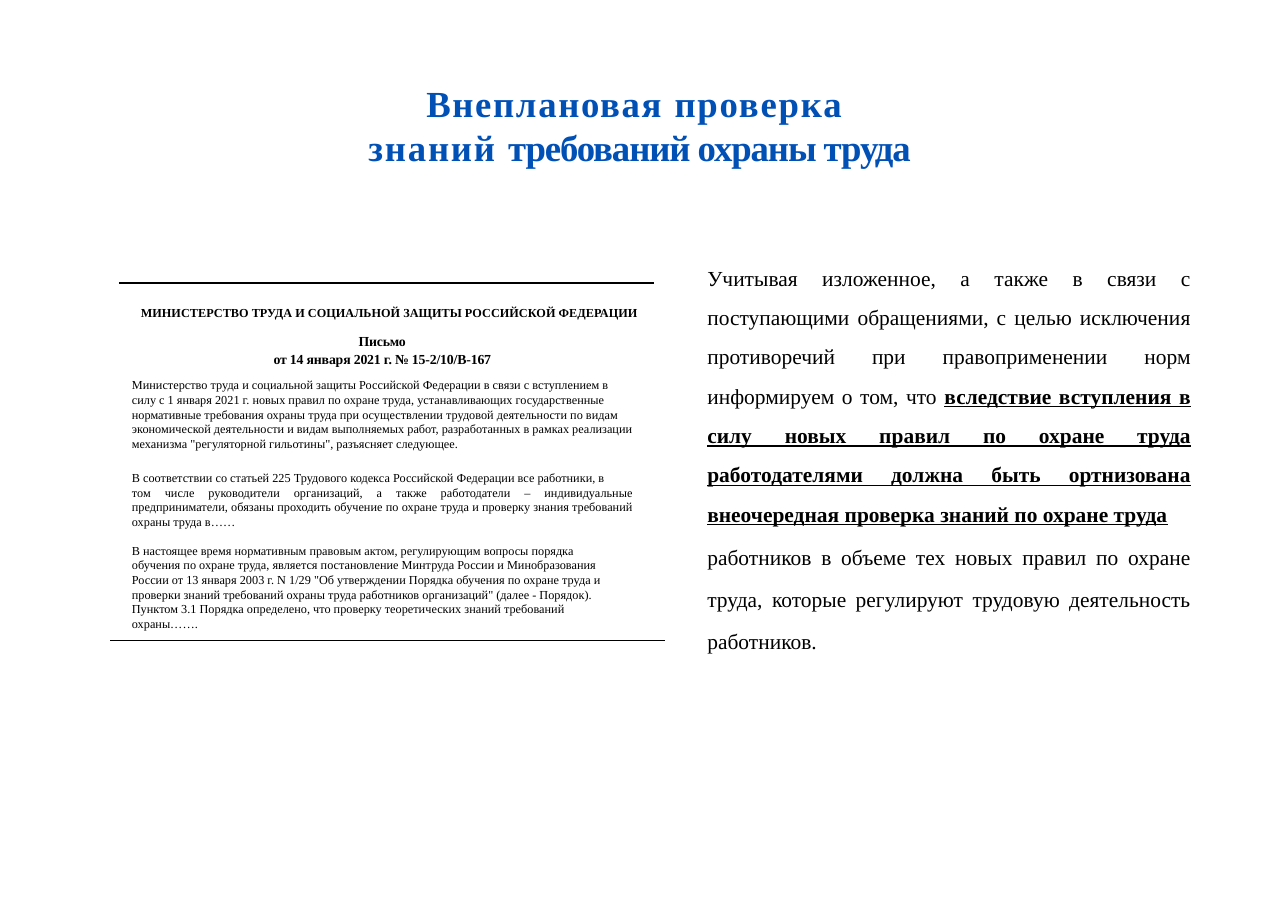
from dataclasses import dataclass

from lxml.etree import SubElement
from pptx import Presentation
from pptx.dml.color import RGBColor
from pptx.enum.shapes import MSO_CONNECTOR
from pptx.enum.text import MSO_ANCHOR, MSO_AUTO_SIZE, PP_ALIGN
from pptx.oxml.ns import qn
from pptx.util import Inches, Pt


@dataclass(frozen=True)
class Theme:
    font: str = "Times New Roman"
    title_color: RGBColor = RGBColor(0x00, 0x50, 0xB6)
    ink: RGBColor = RGBColor(0, 0, 0)
    title_size: int = 24
    conclusion_size: int = 14
    number_size: int = 9
    letter_size: int = 8


@dataclass(frozen=True)
class Box:
    left: float
    top: float
    width: float
    height: float

    def share(self, left, top, width, height):
        return Box(
            self.left + self.width * left / 100,
            self.top + self.height * top / 100,
            self.width * width / 100,
            self.height * height / 100,
        )

    def edges(self):
        return [round(edge) for edge in (self.left, self.top, self.width, self.height)]


THEME = Theme()
SLIDE = Box(0, 0, Inches(11.69), Inches(8.26))

INTRODUCTION = [
    "Министерство труда и социальной защиты Российской Федерации в связи с вступлением в",
    "силу с 1 января 2021 г. новых правил по охране труда, устанавливающих государственные",
    "нормативные требования охраны труда при осуществлении трудовой деятельности по видам",
    "экономической деятельности и видам выполняемых работ, разработанных в рамках реализации",
    "механизма \"регуляторной гильотины\", разъясняет следующее.",
]
OBLIGATION = [
    "В соответствии со статьей 225 Трудового кодекса Российской Федерации все работники, в",
    "том числе руководители организаций, а также работодатели – индивидуальные "
    "предприниматели, обязаны проходить обучение по охране труда и проверку знания "
    "требований охраны труда в……",
]
PROCEDURE = [
    "В настоящее время нормативным правовым актом, регулирующим вопросы порядка",
    "обучения по охране труда, является постановление Минтруда России и Минобразования "
    "России от 13 января 2003 г. N 1/29 \"Об утверждении Порядка обучения по охране труда и "
    "проверки знаний требований охраны труда работников организаций\" (далее - Порядок). "
    "Пунктом 3.1 Порядка определено, что проверку теоретических знаний требований "
    "охраны…….",
]


def write(paragraph, text, size, color=THEME.ink, bold=False, underline=False, tracking=0):
    run = paragraph.add_run()
    run.text = text
    run.font.name = THEME.font
    run.font.size = Pt(size)
    run.font.color.rgb = color
    run.font.bold = bold
    run.font.underline = underline
    if tracking:
        run._r.get_or_add_rPr().set("spc", str(round(tracking * 100)))


def prepare(frame, insets=(0.1, 0.05, 0.1, 0.05)):
    frame.word_wrap = True
    frame.auto_size = MSO_AUTO_SIZE.NONE
    frame.vertical_anchor = MSO_ANCHOR.TOP
    frame.margin_left, frame.margin_top, frame.margin_right, frame.margin_bottom = map(Inches, insets)
    return frame


def add_passage(slide, box, lines, align=PP_ALIGN.LEFT, space=0, **text_format):
    frame = prepare(slide.shapes.add_textbox(*box.edges()).text_frame)
    for index, line in enumerate(lines):
        paragraph = frame.add_paragraph() if index else frame.paragraphs[0]
        paragraph.alignment = align
        if index and space:
            paragraph.space_before = Pt(space)
        write(paragraph, line, **text_format)


def add_rule(slide, box, weight):
    left, top, width, _ = box.edges()
    rule = slide.shapes.add_connector(MSO_CONNECTOR.STRAIGHT, left, top, left + width, top)
    rule.line.color.rgb = THEME.ink
    rule.line.width = Pt(weight)
    SubElement(rule._element.spPr, qn("a:effectLst"))


def add_title(slide, box):
    title = slide.shapes.title
    title.left, title.top, title.width, title.height = box.edges()
    frame = prepare(title.text_frame, (0, 0.01, 0, 0))
    first, second = frame.paragraphs[0], frame.add_paragraph()
    first.alignment = second.alignment = PP_ALIGN.CENTER
    heading = {"size": THEME.title_size, "color": THEME.title_color, "bold": True}
    write(first, "Внеплановая ", tracking=1.1, **heading)
    write(first, "проверка ", tracking=1.2, **heading)
    write(second, "знаний ", tracking=1.2, **heading)
    write(second, "требований охраны труда", tracking=-0.7, **heading)


def add_letter(slide, box):
    add_rule(slide, box.share(1.6, 0, 96.3, 0), 1.18)
    add_rule(slide, box.share(0, 100, 100, 0), 0.71)
    add_passage(
        slide, box.share(3.57, 4.63, 95.83, 7.41),
        ["МИНИСТЕРСТВО ТРУДА И СОЦИАЛЬНОЙ ЗАЩИТЫ РОССИЙСКОЙ ФЕДЕРАЦИИ"],
        size=THEME.letter_size, bold=True,
    )
    add_passage(
        slide, box.share(5.16, 12.35, 87.7, 12.96),
        ["Письмо", "от 14 января 2021 г. № 15-2/10/В-167"],
        align=PP_ALIGN.CENTER, space=1.2,
        size=THEME.number_size, bold=True, tracking=-0.1,
    )
    for lines, top, height, align in (
        (INTRODUCTION, 25, 23.77, PP_ALIGN.JUSTIFY),
        (OBLIGATION, 50.93, 19.75, PP_ALIGN.JUSTIFY),
        (PROCEDURE, 71.3, 23.77, PP_ALIGN.LEFT),
    ):
        add_passage(
            slide, box.share(1.98, top, 94.25, height), lines,
            align=align, size=THEME.letter_size,
        )


def add_conclusion(slide, box):
    frame = prepare(slide.shapes.add_textbox(*box.edges()).text_frame, (0, 0, 0, 0))
    reason, scope = frame.paragraphs[0], frame.add_paragraph()
    reason.alignment = scope.alignment = PP_ALIGN.JUSTIFY
    reason.line_spacing, scope.line_spacing = 1.53, 1.63
    scope.space_before = Pt(1.2)
    size = THEME.conclusion_size
    write(
        reason,
        "Учитывая изложенное, а также в связи с поступающими обращениями, с целью "
        "исключения противоречий при правоприменении норм информируем о том, что ",
        size,
    )
    write(
        reason,
        "вследствие вступления в силу новых правил по охране труда работодателями "
        "должна быть ортнизована внеочередная проверка знаний по охране труда",
        size, bold=True, underline=True,
    )
    write(
        scope,
        "работников в объеме тех новых правил по охране труда, которые регулируют "
        "трудовую деятельность работников.",
        size,
    )


def main():
    presentation = Presentation()
    presentation.slide_width, presentation.slide_height = SLIDE.width, SLIDE.height
    slide = presentation.slides.add_slide(presentation.slide_layouts[5])
    add_title(slide, SLIDE.share(14.37, 8.72, 70.57, 9.93))
    add_letter(slide, SLIDE.share(8.55, 31.11, 43.11, 39.23))
    add_conclusion(slide, SLIDE.share(54.92, 27.6, 37.55, 44.07))
    presentation.save("out.pptx")


if __name__ == "__main__":
    main()
